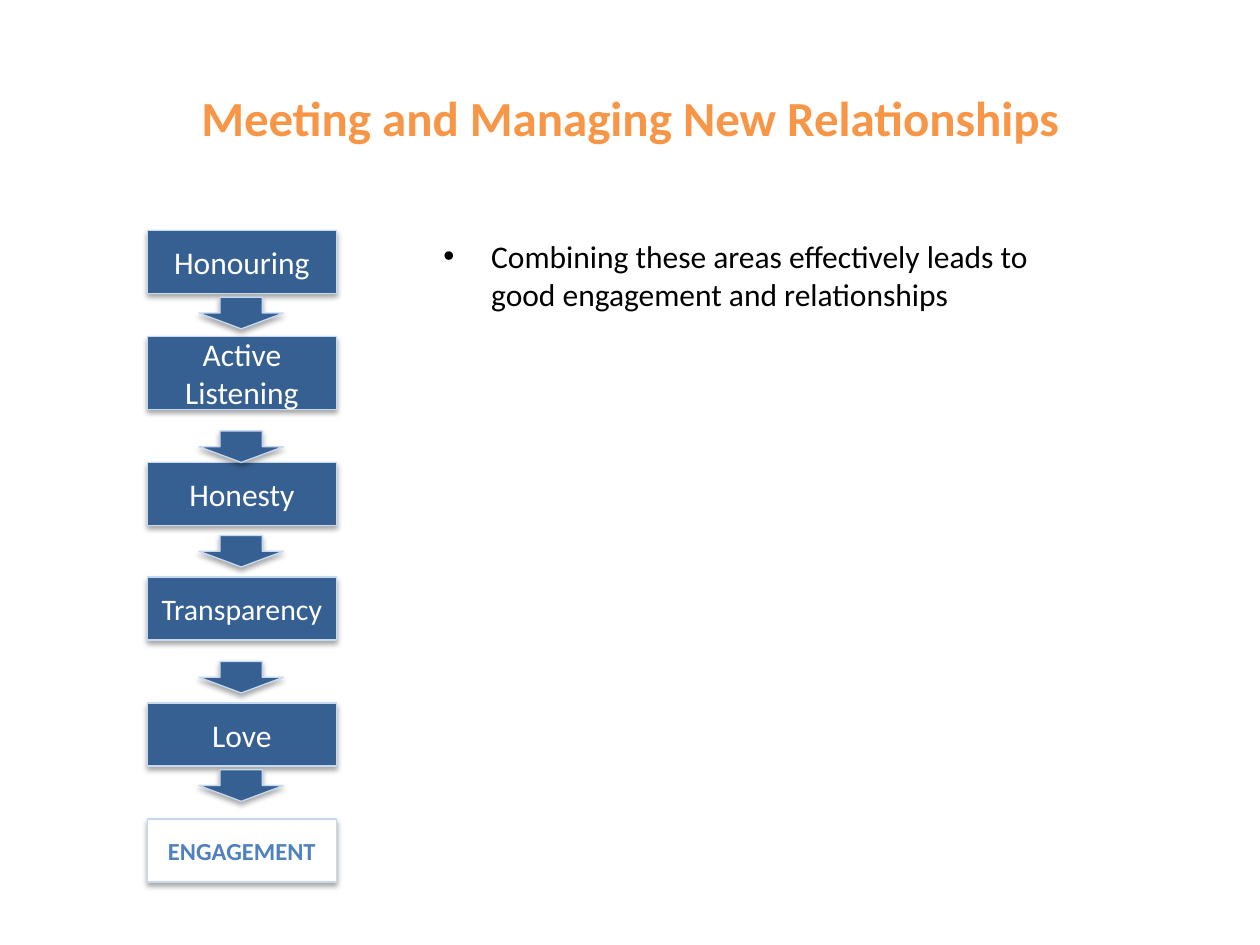
from lxml import etree
from pptx import Presentation
from pptx.dml.color import RGBColor
from pptx.enum.shapes import MSO_SHAPE
from pptx.enum.text import MSO_ANCHOR, PP_ALIGN
from pptx.oxml import parse_xml
from pptx.oxml.ns import nsdecls, qn
from pptx.util import Inches, Pt

RECTANGLE, DOWN_ARROW = MSO_SHAPE.RECTANGLE, MSO_SHAPE.DOWN_ARROW
CENTER, MIDDLE = PP_ALIGN.CENTER, MSO_ANCHOR.MIDDLE

BLUE, PALE_BLUE, WHITE = "376092", "C6D9F1", "FFFFFF"
SHADOW = (
    f'<a:effectLst {nsdecls("a")}>'
    f'<a:outerShdw blurRad="{Pt(3.1)}" dist="{Pt(1.8)}" dir="5400000" rotWithShape="0">'
    '<a:srgbClr val="000000"><a:alpha val="35000"/></a:srgbClr>'
    "</a:outerShdw></a:effectLst>"
)


def set_text(frame, text, size, color, bold=False, align=CENTER):
    frame.word_wrap = True
    para = frame.paragraphs[0]
    para.text = text
    para.alignment = align
    para.font.name = "Calibri"
    para.font.size = Pt(size)
    para.font.bold = bold
    para.font.color.rgb = RGBColor.from_string(color)
    return para


def add_block(kind, left, top, width, height, fill=BLUE):
    """Add a filled shape with a pale outline and a soft shadow below it."""
    block = slide.shapes.add_shape(
        kind, Inches(left), Inches(top), Inches(width), Inches(height))
    block.fill.solid()
    block.fill.fore_color.rgb = RGBColor.from_string(fill)
    block.line.color.rgb = RGBColor.from_string(PALE_BLUE)
    block.line.width = Pt(0.75)
    block.shadow.inherit = False
    properties = block.fill._xPr
    properties.replace(properties.find(qn("a:effectLst")), parse_xml(SHADOW))
    return block


deck = Presentation()
deck.slide_width, deck.slide_height = Inches(10), Inches(7.5)
slide = deck.slides.add_slide(deck.slide_layouts[5])

title = slide.shapes.title
title.left, title.top = Inches(0.5), Inches(0.3)
title.width, title.height = Inches(9), Inches(1.25)
title.text_frame.vertical_anchor = MIDDLE
set_text(title.text_frame, "Meeting and Managing New Relationships", 28, "F79646", bold=True)

# Steps: text, top, height, text size, fill, text colour, bold
steps = [
    ("Honouring", 1.83, 0.5, 18, BLUE, WHITE, False),
    ("Active Listening", 2.67, 0.58, 18, BLUE, WHITE, False),
    ("Honesty", 3.67, 0.5, 18, BLUE, WHITE, False),
    ("Transparency", 4.58, 0.5, 17, BLUE, WHITE, False),
    ("Love", 5.58, 0.5, 18, BLUE, WHITE, False),
    ("ENGAGEMENT", 6.5, 0.5, 14, WHITE, "4F81BD", True),
]
for text, top, height, size, fill, color, bold in steps:
    box = add_block(RECTANGLE, 1.17, top, 1.5, height, fill)
    box.text_frame.vertical_anchor = MIDDLE
    set_text(box.text_frame, text, size, color, bold)

for top in (2.36, 3.42, 4.25, 5.25, 6.11):
    add_block(DOWN_ARROW, 1.58, top, 0.67, 0.25)

message = slide.shapes.add_textbox(Inches(3.42), Inches(1.83), Inches(5.25), Inches(5.08))
para = set_text(
    message.text_frame,
    "Combining these areas effectively leads to good engagement and relationships",
    18, "000000", align=PP_ALIGN.LEFT)
para.space_before = Pt(3.6)
para_properties = para._p.get_or_add_pPr()
para_properties.set("marL", str(Inches(0.38)))
para_properties.set("indent", str(-Inches(0.38)))
bullet_font = etree.Element(qn("a:buFont"), typeface="Arial")
bullet = etree.Element(qn("a:buChar"), char="•")
para_properties.find(qn("a:defRPr")).addprevious(bullet_font)
bullet_font.addnext(bullet)

deck.save("out.pptx")
